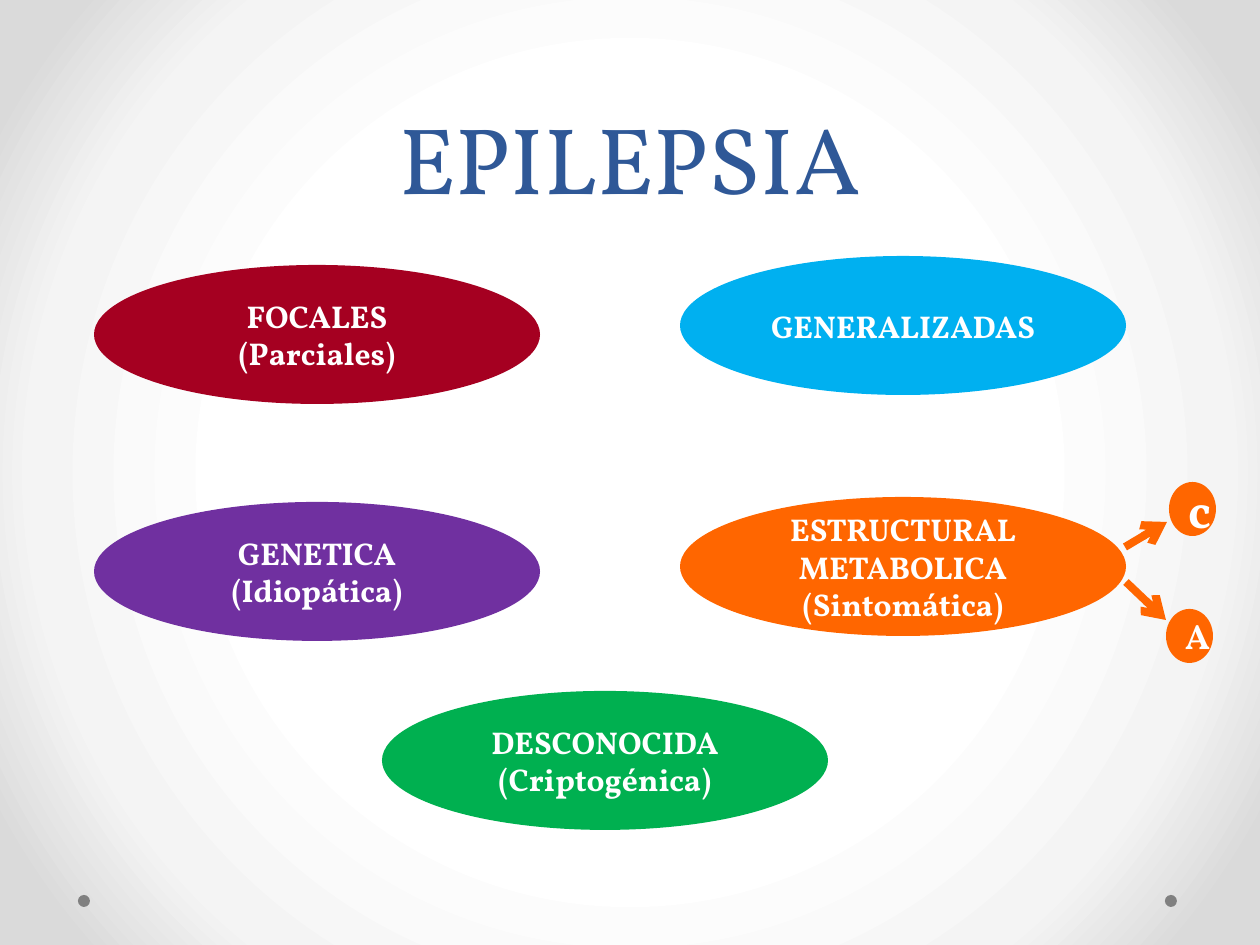
from lxml import etree
from pptx import Presentation
from pptx import util as u
from pptx.dml.color import RGBColor
from pptx.enum import shapes, text
from pptx.oxml.ns import qn

PX = u.Inches(1) // 126
FONT = "Vollkorn"
COLORS = {
    "title": "2F5897", "white": "FFFFFF", "pale": "F4F4F4", "edge": "DADADA",
    "dot": "808080", "focal": "A50021", "general": "00B0F0",
    "genetic": "7030A0", "unknown": "00B050", "structural": "FF6600",
}
OVAL_SIZE = (446, 139)
CAUSE_SIZE = (47, 54)
CATEGORIES = [
    (94, 265, "focal", ["FOCALES", "(Parciales)"]),
    (680, 256, "general", ["GENERALIZADAS"]),
    (94, 502, "genetic", ["GENETICA", "(Idiopática)"]),
    (382, 691, "unknown", ["DESCONOCIDA", "(Criptogénica)"]),
]


def color(name):
    return RGBColor.from_string(COLORS[name])


def emu(*lengths):
    return [length * PX for length in lengths]


def add_line(paragraph, words, size, tint, bold):
    paragraph.alignment = text.PP_ALIGN.CENTER
    run = paragraph.add_run()
    run.text = words
    run.font.name = FONT
    run.font.size = u.Pt(size)
    run.font.bold = bold
    run.font.color.rgb = color(tint)


def add_oval(slide, box, tint, lines=(), size=18):
    oval = slide.shapes.add_shape(shapes.MSO_SHAPE.OVAL, *emu(*box))
    oval.shadow.inherit = False
    oval.fill.solid()
    oval.fill.fore_color.rgb = color(tint)
    oval.line.fill.background()
    frame = oval.text_frame
    frame.word_wrap = True
    frame.vertical_anchor = text.MSO_ANCHOR.MIDDLE
    for index, words in enumerate(lines):
        paragraph = frame.add_paragraph() if index else frame.paragraphs[0]
        add_line(paragraph, words, size, "white", True)


def add_arrow(slide, start, end, tint):
    arrow = slide.shapes.add_connector(
        shapes.MSO_CONNECTOR.STRAIGHT, *emu(*start, *end))
    arrow.line.color.rgb = color(tint)
    arrow.line.width = u.Pt(4.5)
    line = arrow.line._get_or_add_ln()
    etree.SubElement(line, qn("a:tailEnd"), type="arrow")
    etree.SubElement(arrow._element.spPr, qn("a:effectLst"))


def paint_background(slide):
    fill = slide.background.fill
    fill.gradient()
    gradient = slide.background._cSld.find(".//" + qn("a:gradFill"))
    for child in list(gradient):
        gradient.remove(child)
    stops = etree.SubElement(gradient, qn("a:gsLst"))
    for percent, tint in [(0, "white"), (50, "white"), (76, "pale"), (92, "edge"), (100, "edge")]:
        stop = etree.SubElement(stops, qn("a:gs"), pos=str(percent * 1000))
        etree.SubElement(stop, qn("a:srgbClr"), val=COLORS[tint])
    path = etree.SubElement(gradient, qn("a:path"), path="circle")
    etree.SubElement(path, qn("a:fillToRect"), l="50000", t="50000", r="50000", b="50000")


def add_title(slide, box):
    title = slide.shapes.title
    title.left, title.top, title.width, title.height = emu(*box)
    frame = title.text_frame
    frame.auto_size = text.MSO_AUTO_SIZE.NONE
    frame.vertical_anchor = text.MSO_ANCHOR.BOTTOM
    heading = frame.paragraphs[0]
    heading.line_spacing = u.Pt(58)
    add_line(heading, "EPILEPSIA", 54, "title", False)


def add_structural(slide, left, top):
    tint = "structural"
    add_oval(slide, (left, top, *OVAL_SIZE), tint,
             ["ESTRUCTURAL", "METABOLICA", "(Sintomática)"])
    causes = [
        ("c", 28, (489, -15), (445, 50), (487, 25)),
        ("A", 20, (486, 112), (446, 85), (486, 123)),
    ]
    for letter, size, corner, start, end in causes:
        place = [(left + x, top + y) for x, y in (corner, start, end)]
        add_oval(slide, (*place[0], *CAUSE_SIZE), tint, [letter], size)
        add_arrow(slide, place[1], place[2], tint)


def main():
    deck = Presentation()
    deck.slide_width, deck.slide_height = emu(1260, 945)
    slide = deck.slides.add_slide(deck.slide_layouts[5])
    paint_background(slide)
    for left in (78, 1165):
        add_oval(slide, (left, 895, 12, 12), "dot")
    for left, top, tint, lines in CATEGORIES:
        add_oval(slide, (left, top, *OVAL_SIZE), tint, lines)
    add_structural(slide, 680, 497)
    add_title(slide, (63, 0, 1134, 220))
    deck.save("out.pptx")


if __name__ == "__main__":
    main()
